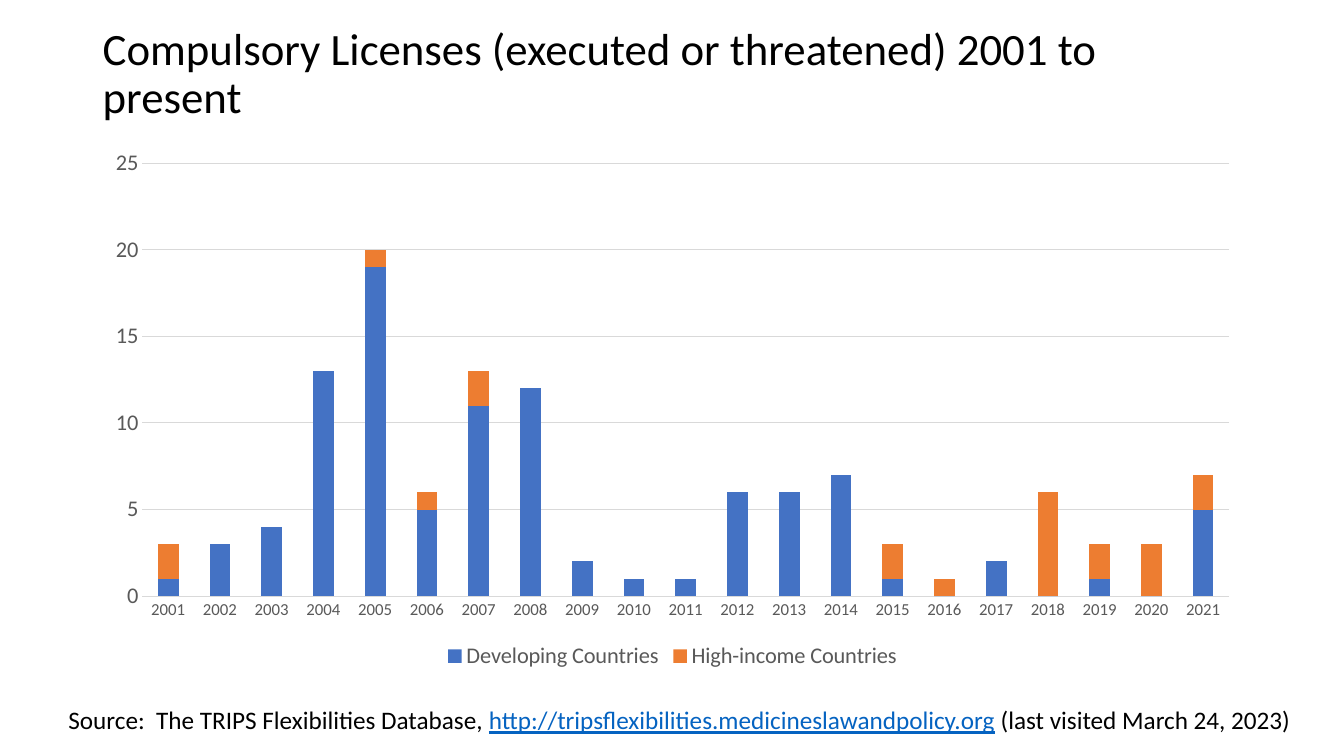
from pptx import Presentation
from pptx.chart.data import CategoryChartData
from pptx.dml.color import RGBColor
from pptx.enum.chart import XL_CHART_TYPE, XL_LEGEND_POSITION, XL_TICK_MARK
from pptx.enum.text import MSO_ANCHOR, MSO_AUTO_SIZE
from pptx.util import Inches, Pt

STACKED = XL_CHART_TYPE.COLUMN_STACKED
BOTTOM = XL_LEGEND_POSITION.BOTTOM
NO_TICK = XL_TICK_MARK.NONE
MIDDLE = MSO_ANCHOR.MIDDLE
GROW = MSO_AUTO_SIZE.SHAPE_TO_FIT_TEXT

# Content
FACE = "Calibri"
BLACK, GREY, PALE, LINK = "000000", "595959", "D9D9D9", "0563C1"
TITLE = [("Compulsory Licenses (executed or threatened) 2001 to present", BLACK, False)]
SOURCE = [
    ("Source:  The TRIPS Flexibilities Database, ", BLACK, False),
    ("http://tripsflexibilities.medicineslawandpolicy.org", LINK, True),
    (" (last visited March 24, 2023)", BLACK, False),
]
YEARS = [str(year) for year in range(2001, 2022)]
SERIES = [
    ("Developing Countries", "4472C4",
     [1, 3, 4, 13, 19, 5, 11, 12, 2, 1, 1, 6, 6, 7, 1, 0, 2, 0, 1, 0, 5]),
    ("High-income Countries", "ED7D31",
     [2, 0, 0, 0, 1, 1, 2, 0, 0, 0, 0, 0, 0, 0, 2, 1, 0, 6, 2, 3, 2]),
]


def color(code):
    return RGBColor.from_string(code)


def style(font, size, code):
    font.name = FACE
    font.size = Pt(size)
    font.color.rgb = color(code)


def rule(line, code):
    line.color.rgb = color(code)
    line.width = Pt(0.75)


def add_text(slide, area, runs, size, wrap):
    box = slide.shapes.add_textbox(*map(Inches, area))
    frame = box.text_frame
    frame.word_wrap = wrap
    for text, code, under in runs:
        run = frame.paragraphs[0].add_run()
        run.text = text
        style(run.font, size, code)
        run.font.underline = under
    return frame


def add_columns(slide, area):
    data = CategoryChartData()
    data.categories = YEARS
    for name, _, values in SERIES:
        data.add_series(name, values)
    chart = slide.shapes.add_chart(STACKED, *map(Inches, area), data).chart
    chart.has_title = False
    style(chart.font, 10, BLACK)

    # Columns
    plot = chart.plots[0]
    plot.gap_width = 150
    plot.overlap = 100
    plot.vary_by_categories = False
    for series, (_, code, _) in zip(plot.series, SERIES):
        series.format.fill.solid()
        series.format.fill.fore_color.rgb = color(code)

    # Axes
    years, counts = chart.category_axis, chart.value_axis
    for axis, size in ((years, 12), (counts, 16)):
        axis.major_tick_mark = axis.minor_tick_mark = NO_TICK
        style(axis.tick_labels.font, size, GREY)
    rule(years.format.line, PALE)
    counts.format.line.fill.background()
    counts.has_major_gridlines = True
    rule(counts.major_gridlines.format.line, PALE)
    counts.minimum_scale, counts.maximum_scale = 0, 25
    counts.major_unit = 5

    # Legend
    chart.has_legend = True
    chart.legend.position = BOTTOM
    chart.legend.include_in_layout = False
    style(chart.legend.font, 16, GREY)


def main():
    deck = Presentation()
    deck.slide_width, deck.slide_height = Inches(13.33), Inches(7.5)
    slide = deck.slides.add_slide(deck.slide_layouts[6])

    # Title, chart and source line
    title = add_text(slide, (0.92, 0.25, 11.5, 0.99), TITLE, 32, True)
    title.vertical_anchor = MIDDLE
    title.paragraphs[0].line_spacing = 0.9
    add_columns(slide, (0.92, 1.38, 11.5, 5.31))
    source = add_text(slide, (0.58, 6.94, 12.41, 0.4), SOURCE, 18, False)
    source.auto_size = GROW

    deck.save("out.pptx")


if __name__ == "__main__":
    main()
